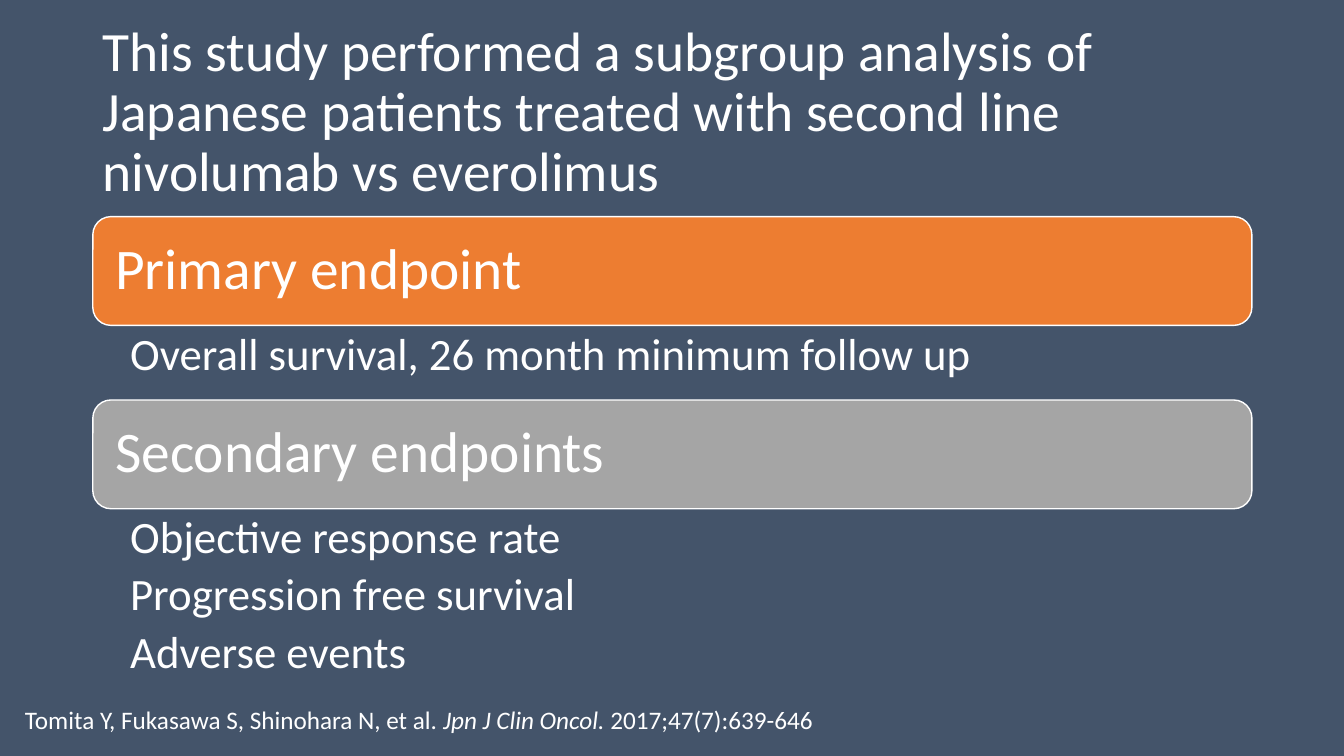
from dataclasses import dataclass

from pptx import Presentation
from pptx.dml.color import RGBColor
from pptx.enum.shapes import MSO_SHAPE
from pptx.enum.text import MSO_ANCHOR, MSO_AUTO_SIZE, PP_ALIGN
from pptx.util import Cm, Pt


@dataclass(frozen=True)
class Theme:
    font: str = "Calibri"
    back: str = "44546A"
    text: str = "FFFFFF"
    first: str = "ED7D31"
    second: str = "A5A5A5"
    title: float = 39.6
    head: float = 41
    body: float = 32
    cite: float = 18


def color(code):
    return RGBColor.from_string(code)


def write(frame, paras, *, size, font, ink, anchor=MSO_ANCHOR.TOP,
          pad=(0.25, 0.13, 0.25, 0.13), lead=0.9, after=0):
    """Each paragraph is a list of (text, italic) runs; pad is in cm."""
    frame.word_wrap = True
    frame.auto_size = MSO_AUTO_SIZE.NONE
    frame.vertical_anchor = anchor
    (frame.margin_left, frame.margin_top,
     frame.margin_right, frame.margin_bottom) = map(Cm, pad)
    for i, runs in enumerate(paras):
        para = frame.add_paragraph() if i else frame.paragraphs[0]
        para.alignment = PP_ALIGN.LEFT
        para.line_spacing = lead
        para.space_before = Pt(0)
        para.space_after = Pt(after)
        for text, slant in runs:
            run = para.add_run()
            run.text = text
            run.font.name = font
            run.font.size = Pt(size)
            run.font.italic = slant
            run.font.color.rgb = color(ink)


class Deck:
    def __init__(self, theme):
        self.theme = theme
        self.show = Presentation()
        self.show.slide_width = Cm(33.87)
        self.show.slide_height = Cm(19.05)
        self.slide = self.show.slides.add_slide(self.show.slide_layouts[5])
        fill = self.slide.background.fill
        fill.solid()
        fill.fore_color.rgb = color(theme.back)

    def put(self, frame, paras, size, **form):
        write(frame, paras, size=size, font=self.theme.font,
              ink=self.theme.text, **form)

    def title(self, text, left, top, width, height):
        shape = self.slide.shapes.title
        shape.left, shape.top = Cm(left), Cm(top)
        shape.width, shape.height = Cm(width), Cm(height)
        self.put(shape.text_frame, [[(text, False)]], self.theme.title,
                 anchor=MSO_ANCHOR.MIDDLE)

    def bar(self, text, fill, left, top, width, height):
        shape = self.slide.shapes.add_shape(
            MSO_SHAPE.ROUNDED_RECTANGLE, Cm(left), Cm(top), Cm(width), Cm(height))
        shape.shadow.inherit = False
        shape.fill.solid()
        shape.fill.fore_color.rgb = color(fill)
        shape.line.color.rgb = color(self.theme.text)
        shape.line.width = Pt(1)
        self.put(shape.text_frame, [[(text, False)]], self.theme.head,
                 anchor=MSO_ANCHOR.MIDDLE, pad=(0.43, 0.43, 0.43, 0.43))

    def box(self, paras, size, left, top, width, height, **form):
        shape = self.slide.shapes.add_textbox(
            Cm(left), Cm(top), Cm(width), Cm(height))
        self.put(shape.text_frame, paras, size, **form)


def main():
    theme = Theme()
    deck = Deck(theme)
    left, width = 2.34, 29.21

    # Title
    deck.title("This study performed a subgroup analysis of Japanese patients "
               "treated with second line nivolumab vs everolimus",
               left, 1.02, width, 3.68)

    # Endpoint bars, each with its list below
    parts = [
        ("Primary endpoint", theme.first, 1.88,
         ["Overall survival, 26 month minimum follow up"]),
        ("Secondary endpoints", theme.second, 4.6,
         ["Objective response rate", "Progression free survival",
          "Adverse events"]),
    ]
    top, tall = 5.46, 2.74
    for head, fill, deep, items in parts:
        deck.bar(head, fill, left, top, width, tall)
        top += tall
        deck.box([[(item, False)] for item in items], theme.body,
                 left, top, width, deep,
                 pad=(0.94, 0.15, 0.81, 0.15), after=6.4)
        top += deep

    # Citation
    deck.box([[("Tomita Y, Fukasawa S, Shinohara N, et al", False),
               (". Jpn J Clin Oncol. ", True),
               ("2017;47(7):639-646", False)]],
             theme.cite, 0.38, 17.63, 22.3, 1.02, lead=1)

    deck.show.save("out.pptx")


if __name__ == "__main__":
    main()
